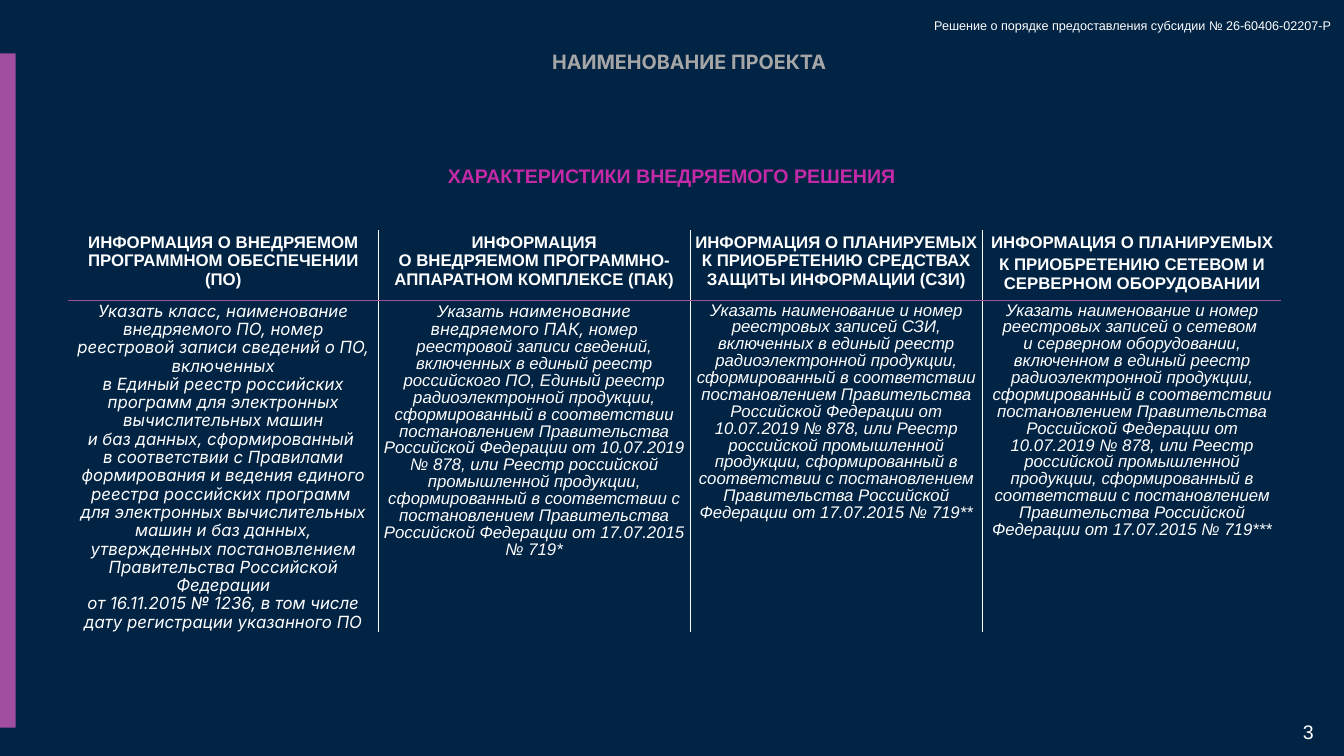
from lxml import etree
from pptx import Presentation
from pptx.dml.color import RGBColor
from pptx.enum import shapes, text
from pptx.oxml.ns import qn
from pptx.util import Inches, Pt

COLORS = {"navy": "012344", "white": "FFFFFF", "purple": "A14DA0",
          "magenta": "C42AA7", "gray": "A6A6A6"}
CENTER, RIGHT, LEFT = text.PP_ALIGN.CENTER, text.PP_ALIGN.RIGHT, text.PP_ALIGN.LEFT

# text, (left, top, width, height), size, font, color, bold, alignment, insets, wrap, anchor
LABELS = [
    ("3", (25.39, 14.22, 0.81, 0.61), 28, "Arial", "white", False, RIGHT,
     (0.13, 0.13), True, text.MSO_ANCHOR.MIDDLE),
    ("ХАРАКТЕРИСТИКИ ВНЕДРЯЕМОГО РЕШЕНИЯ", (6.38, 3.15, 13.89, 0.67), 28, "Arial",
     "magenta", True, CENTER, (0.1, 0.1), True, text.MSO_ANCHOR.TOP),
    ("НАИМЕНОВАНИЕ ПРОЕКТА", (1.92, 0.94, 23.51, 0.58), 28.2, "Inter",
     "gray", True, CENTER, (0.1, 0.05), True, text.MSO_ANCHOR.TOP),
    ("Решение о порядке предоставления субсидии № 26-60406-02207-Р",
     (18.44, 0.3, 8.22, 0.4), 18, "Arial", "white", False, LEFT,
     (0.1, 0.05), False, text.MSO_ANCHOR.TOP),
]

RADIO_REGISTER = (
    "радиоэлектронной продукции, сформированный в соответствии постановлением "
    "Правительства Российской Федерации от 10.07.2019 № 878, или Реестр российской "
    "промышленной продукции, сформированный в соответствии с постановлением "
    "Правительства Российской Федерации от 17.07.2015 № 719")

# Each cell is a list of paragraphs, each paragraph a list of (text, font) runs
HEADERS = [
    [[("ИНФОРМАЦИЯ О ВНЕДРЯЕМОМ ПРОГРАММНОМ ОБЕСПЕЧЕНИИ (ПО)", "Arial")]],
    [[("ИНФОРМАЦИЯ\nО ВНЕДРЯЕМОМ ПРОГРАММНО-АППАРАТНОМ КОМПЛЕКСЕ (ПАК)", "Arial")]],
    [[("ИНФОРМАЦИЯ О ПЛАНИРУЕМЫХ К ПРИОБРЕТЕНИЮ СРЕДСТВАХ ЗАЩИТЫ ИНФОРМАЦИИ (СЗИ)",
       "Arial")]],
    [[("ИНФОРМАЦИЯ О ПЛАНИРУЕМЫХ", "Arial")],
     [("К ПРИОБРЕТЕНИЮ СЕТЕВОМ И СЕРВЕРНОМ ОБОРУДОВАНИИ", "Arial")]],
]
DETAILS = [
    [[("Указать класс, наименование внедряемого ПО, номер реестровой записи сведений "
       "о ПО, включенных", "Inter")],
     [("в Единый реестр российских программ для электронных вычислительных машин",
       "Inter")],
     [("и баз данных, сформированный \nв соответствии с Правилами формирования и "
       "ведения единого реестра российских программ \nдля электронных вычислительных "
       "машин и баз данных, утвержденных постановлением Правительства Российской "
       "Федерации", "Inter")],
     [("от 16.11.2015 № 1236, в том числе дату регистрации указанного ПО", "Inter")]],
    [[("Указать ", "Arial"), ("наименование внедряемого ПАК, ", "Inter"),
      ("номер реестровой записи сведений, включенных в единый реестр российского ПО, "
       "Единый реестр " + RADIO_REGISTER + "*", "Arial")]],
    [[("Указать наименование и номер реестровых записей СЗИ, включенных в единый "
       "реестр " + RADIO_REGISTER + "**", "Arial")]],
    [[("Указать наименование и номер реестровых записей о сетевом \nи серверном "
       "оборудовании, включенном в единый реестр " + RADIO_REGISTER + "***", "Arial")]],
]
COL_WIDTHS = [6.16, 6.18, 5.81, 5.93]
ROWS = [  # cells, height, font format, paragraph format
    (HEADERS, 1.38, {"bold": True, "italic": False}, {"space_after": Pt(6)}),
    (DETAILS, 5.86, {"bold": False, "italic": True}, {"line_spacing": 0.9}),
]


def rgb(name):
    return RGBColor.from_string(COLORS[name])


def apply(obj, fmt):
    for key, value in fmt.items():
        setattr(obj, key, value)


def add_run(p, content, color, fmt):
    """Add text to a paragraph, turning newlines into line breaks."""
    for i, line in enumerate(content.split("\n")):
        if i:
            p.add_line_break()
        r = p.add_run()
        r.text = line
        apply(r.font, fmt)
        r.font.color.rgb = rgb(color)


def add_label(s, content, box, size, font, color, bold, align, insets, wrap, anchor):
    tf = s.shapes.add_textbox(*map(Inches, box)).text_frame
    dx, dy = map(Inches, insets)
    apply(tf, {"margin_left": dx, "margin_right": dx, "margin_top": dy,
               "margin_bottom": dy, "word_wrap": wrap, "vertical_anchor": anchor})
    p = tf.paragraphs[0]
    p.alignment = align
    add_run(p, content, color, {"size": Pt(size), "name": font, "bold": bold})


def set_borders(cell, sides):
    """Draw 1 pt lines on the sides with a color and hide the others."""
    tc_pr = cell._tc.get_or_add_tcPr()
    for i, side in enumerate(("lnL", "lnR", "lnT", "lnB")):
        ln = etree.Element(qn("a:" + side), w=str(Pt(1)))
        if side in sides:
            fill = etree.SubElement(ln, qn("a:solidFill"))
            etree.SubElement(fill, qn("a:srgbClr"), val=COLORS[sides[side]])
        else:
            etree.SubElement(ln, qn("a:noFill"))
        tc_pr.insert(i, ln)


def fill_cell(cell, paragraphs, font_fmt, para_fmt):
    cell.fill.background()
    tf = cell.text_frame
    for i, runs in enumerate(paragraphs):
        p = tf.add_paragraph() if i else tf.paragraphs[0]
        apply(p, {"alignment": CENTER, **para_fmt})
        for content, font in runs:
            add_run(p, content, "white", {"size": Pt(24), "name": font, **font_fmt})


def add_details_table(s):
    height = sum(row[1] for row in ROWS)
    table = s.shapes.add_table(len(ROWS), len(COL_WIDTHS), Inches(1.35), Inches(4.57),
                               Inches(sum(COL_WIDTHS)), Inches(height)).table
    apply(table, {"first_row": False, "horz_banding": False})
    for column, width in zip(table.columns, COL_WIDTHS):
        column.width = Inches(width)
    for i, (cells, row_height, font_fmt, para_fmt) in enumerate(ROWS):
        table.rows[i].height = Inches(row_height)
        for j, paragraphs in enumerate(cells):
            sides = {"lnT" if i else "lnB": "purple"}
            if j > 0:
                sides["lnL"] = "white"
            if j < len(cells) - 1:
                sides["lnR"] = "white"
            cell = table.cell(i, j)
            fill_cell(cell, paragraphs, font_fmt, para_fmt)
            set_borders(cell, sides)


def main():
    prs = Presentation()
    prs.slide_width, prs.slide_height = Inches(26.67), Inches(15)
    s = prs.slides.add_slide(prs.slide_layouts[6])
    s.background.fill.solid()
    s.background.fill.fore_color.rgb = rgb("navy")

    bar = s.shapes.add_shape(shapes.MSO_SHAPE.RECTANGLE, Inches(0), Inches(1.06),
                             Inches(0.31), Inches(13.38))
    bar.shadow.inherit = False
    bar.fill.solid()
    bar.fill.fore_color.rgb = rgb("purple")
    bar.line.fill.background()

    for label in LABELS:
        add_label(s, *label)
    add_details_table(s)
    prs.save("out.pptx")


if __name__ == "__main__":
    main()
